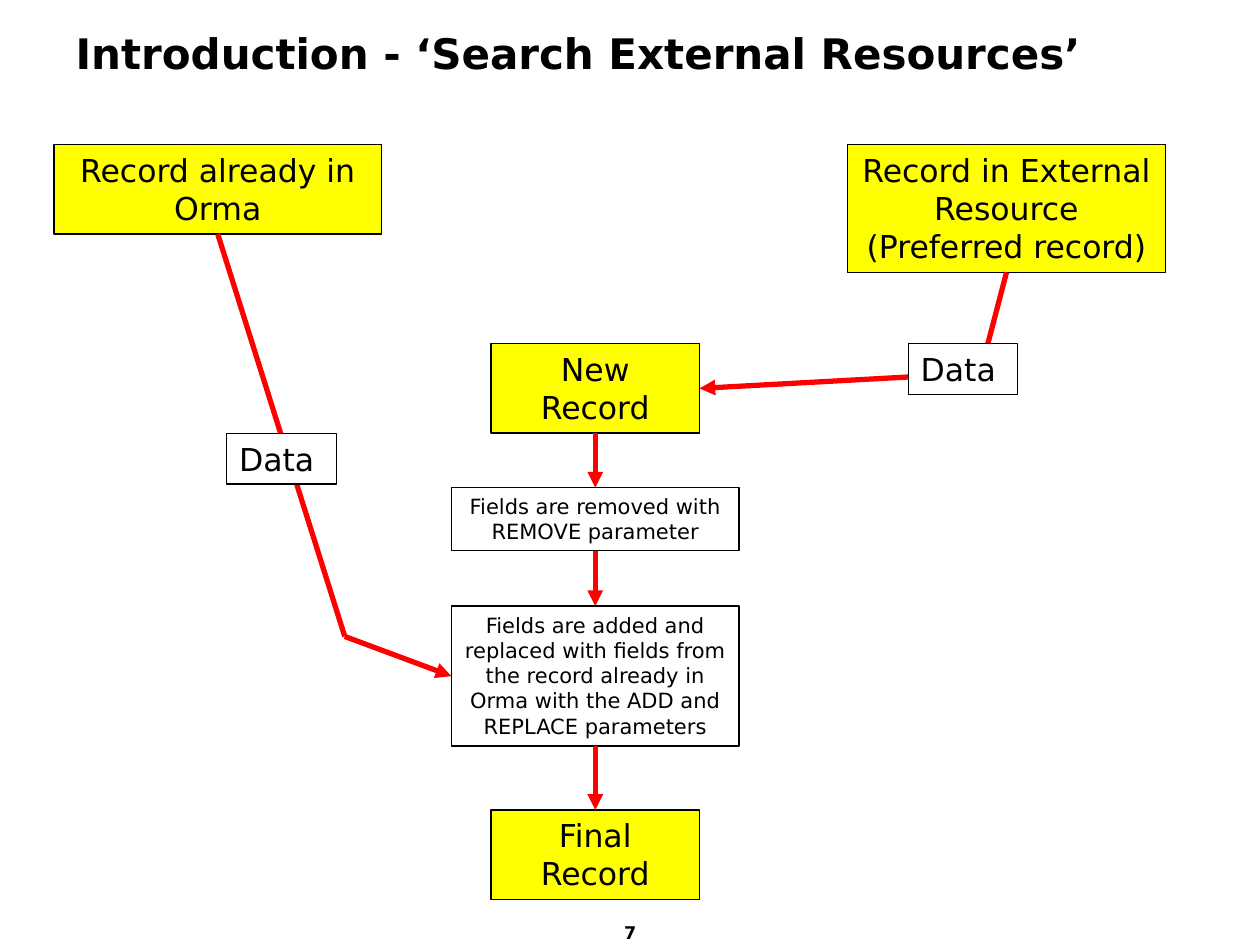
from dataclasses import dataclass

from lxml.etree import SubElement
from pptx import Presentation
from pptx.dml.color import RGBColor as RGB
from pptx.enum.shapes import MSO_CONNECTOR as LINE, MSO_SHAPE as SHAPE
from pptx.enum.text import MSO_ANCHOR as ANCHOR, MSO_AUTO_SIZE as FIT, PP_ALIGN as ALIGN
from pptx.oxml.ns import qn
from pptx.util import Cm, Pt

TOP, LEFT, BOTTOM, RIGHT = range(4)


@dataclass(frozen=True)
class Theme:
    font: str = "DejaVu Sans"
    ink: RGB = RGB(0, 0, 0)
    paper: RGB = RGB(255, 255, 255)
    record: RGB = RGB(255, 255, 0)
    flow: RGB = RGB(255, 0, 0)
    title: int = 24
    large: int = 18
    small: int = 12
    number: int = 10
    border: float = 0.75
    arrow: float = 3


class Deck:
    def __init__(self, theme):
        self.theme = theme
        self.prs = Presentation()
        self.prs.slide_width, self.prs.slide_height = Cm(25.4), Cm(19.05)
        self.slide = self.prs.slides.add_slide(self.prs.slide_layouts[5])

    def set_text(self, sp, text, size, align=ALIGN.CENTER, anchor=ANCHOR.TOP, bold=False):
        tf = sp.text_frame
        tf.word_wrap, tf.vertical_anchor = True, anchor
        tf.text = text
        style = {"name": self.theme.font, "size": Pt(size), "bold": bold}
        for p in tf.paragraphs:
            p.alignment = align
            for r in p.runs:
                for key, value in style.items():
                    setattr(r.font, key, value)
                r.font.color.rgb = self.theme.ink

    def title(self, text, area):
        sp = self.slide.shapes.title
        for key, value in zip(("left", "top", "width", "height"), area):
            setattr(sp, key, Cm(value))
        self.set_text(sp, text, self.theme.title, ALIGN.LEFT, ANCHOR.MIDDLE, True)
        sp.text_frame.auto_size = FIT.NONE

    def number(self, text, area):
        sp = self.slide.shapes.add_textbox(*map(Cm, area))
        self.set_text(sp, text, self.theme.number, anchor=ANCHOR.BOTTOM, bold=True)

    def box(self, text, area, fill, size, align=ALIGN.CENTER):
        sp = self.slide.shapes.add_shape(SHAPE.RECTANGLE, *map(Cm, area))
        sp.shadow.inherit = False
        sp.fill.solid()
        sp.fill.fore_color.rgb = fill
        sp.line.color.rgb = self.theme.ink
        sp.line.width = Pt(self.theme.border)
        self.set_text(sp, text, size, align)
        sp.text_frame.auto_size = FIT.SHAPE_TO_FIT_TEXT
        return sp

    def record(self, text, *area):
        return self.box(text, area, self.theme.record, self.theme.large)

    def step(self, text, *area):
        return self.box(text, area, self.theme.paper, self.theme.small)

    def data(self, left, top):
        area = (left, top, 2.21, 1.02)
        return self.box("Data", area, self.theme.paper, self.theme.large, ALIGN.LEFT)

    def line(self, start=None, end=None, bend=(0, 0), head=True):
        x, y = map(Cm, bend)
        s = self.slide.shapes.add_connector(LINE.STRAIGHT, x, y, x, y)
        if start:
            s.begin_connect(*start)
        if end:
            s.end_connect(*end)
        s.line.color.rgb = self.theme.flow
        s.line.width = Pt(self.theme.arrow)
        props = s.element.spPr
        if head:
            SubElement(props.get_or_add_ln(), qn("a:tailEnd"), type="triangle")
        SubElement(props, qn("a:effectLst"))

    def bent_arrow(self, start, bend, end):
        self.line(start=start, bend=bend, head=False)
        self.line(end=end, bend=bend)


def main():
    deck = Deck(Theme())
    deck.title("Introduction - ‘Search External Resources’", (1.27, 0.33, 22.86, 1.47))
    deck.number("7", (11.89, 17.86, 1.63, 1.27))

    existing = deck.record("Record already in Orma", 1.09, 2.92, 6.6, 1.8)
    external = deck.record("Record in External Resource\n(Preferred record)",
                           17.09, 2.92, 6.4, 2.57)
    new = deck.record("New Record", 9.9, 6.93, 4.2, 1.8)
    remove = deck.step("Fields are removed with REMOVE parameter", 9.1, 9.83, 5.8, 1.27)
    add = deck.step("Fields are added and replaced with fields from the record already in "
                    "Orma with the ADD and REPLACE parameters", 9.1, 12.22, 5.8, 2.82)
    final = deck.record("Final Record", 9.9, 16.33, 4.2, 1.8)

    chain = [new, remove, add, final]
    for above, below in zip(chain, chain[1:]):
        deck.line((above, BOTTOM), (below, TOP))
    deck.bent_arrow((external, BOTTOM), (19.76, 7.52), (new, RIGHT))
    deck.bent_arrow((existing, BOTTOM), (6.95, 12.83), (add, LEFT))

    deck.data(4.57, 8.74)
    deck.data(18.31, 6.93)
    deck.prs.save("out.pptx")


if __name__ == "__main__":
    main()
